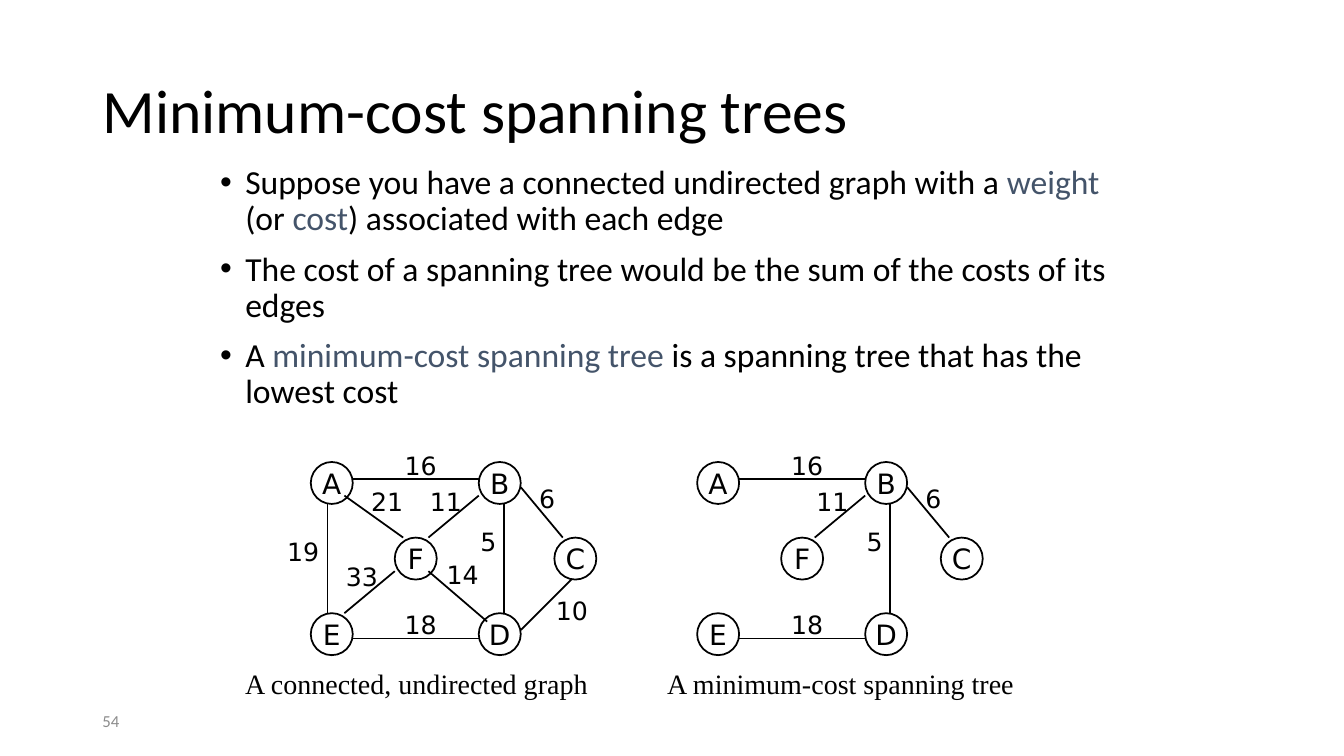
from dataclasses import dataclass

import lxml.etree
import pptx
import pptx.dml.color
import pptx.enum.shapes
import pptx.enum.text
import pptx.oxml.ns
import pptx.shapes.group
import pptx.slide
import pptx.text.text
import pptx.util

COLORS = {"black": "000000", "accent": "44546A", "grey": "8C8C8C"}
# The slide is a grid of 160 columns by 90 rows of equal square cells.
COLUMNS, ROWS = 160, 90
CELL = pptx.util.Inches(7.5) / ROWS
NODE_SIZE = 5
TREE_SHIFT = 46


@dataclass(frozen=True)
class Node:
    letter: str
    column: int
    row: int


@dataclass(frozen=True)
class Edge:
    weight: str
    start: tuple[int, int]
    end: tuple[int, int]
    label: tuple[float, float]
    in_tree: bool = False


NODES = [
    Node("A", 37, 55), Node("B", 57, 55), Node("E", 37, 73),
    Node("D", 57, 73), Node("F", 47, 64), Node("C", 66, 64),
]
EDGES = [
    Edge("16", (42, 57), (57, 57), (47, 53), True),
    Edge("19", (39, 60), (39, 73), (33, 63.25)),
    Edge("21", (41, 59), (48, 64), (43, 57.25)),
    Edge("11", (57, 59), (51, 64), (50, 57.25), True),
    Edge("33", (41, 73), (47, 68), (40, 66.25)),
    Edge("14", (58, 74), (51, 68), (52, 66)),
    Edge("18", (42, 76), (57, 76), (47, 72), True),
    Edge("10", (62, 75), (68, 69), (65, 70.25)),
    Edge("6", (62, 58), (67, 64), (63, 57), True),
    Edge("5", (60, 60), (60, 73), (56, 62.1), True),
]
# Each bullet is a list of (text, colour) pieces.
BULLETS = [
    [("Suppose you have a connected undirected graph with a ", "black"), ("weight", "accent"),
     (" (or ", "black"), ("cost", "accent"), (") associated with each edge", "black")],
    [("The cost of a spanning tree would be the sum of the costs of its edges", "black")],
    [("A ", "black"), ("minimum-cost spanning tree", "accent"),
     (" is a spanning tree that has the lowest cost", "black")],
]


def cells(*counts: float) -> list[pptx.util.Emu]:
    """Convert grid counts to lengths."""
    return [pptx.util.Emu(round(count * CELL)) for count in counts]


def rgb(name: str) -> pptx.dml.color.RGBColor:
    return pptx.dml.color.RGBColor.from_string(COLORS[name])


def set_font(font: pptx.text.text.Font, name: str, size: float, color: str = "black") -> None:
    font.name, font.size = name, pptx.util.Pt(size)
    font.color.rgb = rgb(color)


def place(shape, column: float, row: float, width: float, height: float) -> None:
    shape.left, shape.top, shape.width, shape.height = cells(column, row, width, height)


def add_text(shapes, text: str, box: tuple[float, float, float, float],
             font_name: str, size: float, color: str = "black"):
    text_box = shapes.add_textbox(*cells(*box))
    text_box.text_frame.word_wrap = True
    paragraph = text_box.text_frame.paragraphs[0]
    paragraph.text = text
    set_font(paragraph.font, font_name, size, color)
    return text_box


def fill_title(slide: pptx.slide.Slide) -> None:
    title = slide.shapes.title
    place(title, 11, 4.8, 138, 17.4)
    title.text_frame.text = "Minimum-cost spanning trees"
    title.text_frame.auto_size = pptx.enum.text.MSO_AUTO_SIZE.NONE
    title.text_frame.vertical_anchor = pptx.enum.text.MSO_ANCHOR.MIDDLE
    paragraph = title.text_frame.paragraphs[0]
    paragraph.alignment = pptx.enum.text.PP_ALIGN.LEFT
    paragraph.line_spacing = 0.9
    set_font(paragraph.font, "Calibri", 44)


def fill_bullets(slide: pptx.slide.Slide) -> None:
    body = slide.placeholders[1]
    place(body, 25, 19.1, 112.5, 32.75)
    frame = body.text_frame
    frame.auto_size = pptx.enum.text.MSO_AUTO_SIZE.NONE
    for index, pieces in enumerate(BULLETS):
        paragraph = frame.paragraphs[0] if index == 0 else frame.add_paragraph()
        paragraph.line_spacing = 0.9
        paragraph.space_before = pptx.util.Pt(10)
        set_font(paragraph.font, "Calibri", 24)
        indent = pptx.util.Inches(0.25)
        properties = paragraph._p.get_or_add_pPr()
        properties.set("marL", str(indent))
        properties.set("indent", str(-indent))
        for text, color in pieces:
            run = paragraph.add_run()
            run.text = text
            run.font.color.rgb = rgb(color)


def style_line(line) -> None:
    line.color.rgb = rgb("black")
    line.width = pptx.util.Pt(1.25)


def draw_node(group: pptx.shapes.group.GroupShape, node: Node, shift: int) -> None:
    circle = group.shapes.add_shape(
        pptx.enum.shapes.MSO_SHAPE.OVAL,
        *cells(node.column + shift, node.row, NODE_SIZE, NODE_SIZE))
    circle.shadow.inherit = False
    circle.fill.background()
    style_line(circle.line)
    circle.text_frame.word_wrap = False
    circle.text_frame.vertical_anchor = pptx.enum.text.MSO_ANCHOR.MIDDLE
    paragraph = circle.text_frame.paragraphs[0]
    paragraph.text = node.letter
    paragraph.alignment = pptx.enum.text.PP_ALIGN.CENTER
    set_font(paragraph.font, "DejaVu Sans", 20)


def draw_edge(group: pptx.shapes.group.GroupShape, edge: Edge, shift: int) -> None:
    (start_column, start_row), (end_column, end_row) = edge.start, edge.end
    connector = group.shapes.add_connector(
        pptx.enum.shapes.MSO_CONNECTOR.STRAIGHT,
        *cells(start_column + shift, start_row, end_column + shift, end_row))
    style_line(connector.line)
    lxml.etree.SubElement(connector._element.spPr, pptx.oxml.ns.qn("a:effectLst"))
    column, row = edge.label
    add_text(group.shapes, edge.weight, (column + shift, row, 7, 4.8), "DejaVu Sans", 18)


def draw_graph(slide: pptx.slide.Slide, edges: list[Edge], shift: int,
               caption: str, caption_column: float) -> None:
    group = slide.shapes.add_group_shape()
    for node in NODES:
        draw_node(group, node, shift)
    for edge in edges:
        draw_edge(group, edge, shift)
    add_text(group.shapes, caption, (caption_column, 78.8, 45, 5.2), "Times New Roman", 20)


def main() -> None:
    presentation = pptx.Presentation()
    presentation.slide_width, presentation.slide_height = cells(COLUMNS, ROWS)
    slide = presentation.slides.add_slide(presentation.slide_layouts[1])
    fill_title(slide)
    fill_bullets(slide)
    draw_graph(slide, EDGES, 0, "A connected, undirected graph", 28)
    draw_graph(slide, [edge for edge in EDGES if edge.in_tree], TREE_SHIFT,
               "A minimum-cost spanning tree", 78.25)
    number = add_text(slide.shapes, "54", (11, 83.4, 36, 4.8), "Calibri", 12, "grey")
    number.text_frame.vertical_anchor = pptx.enum.text.MSO_ANCHOR.MIDDLE
    presentation.save("out.pptx")


if __name__ == "__main__":
    main()
